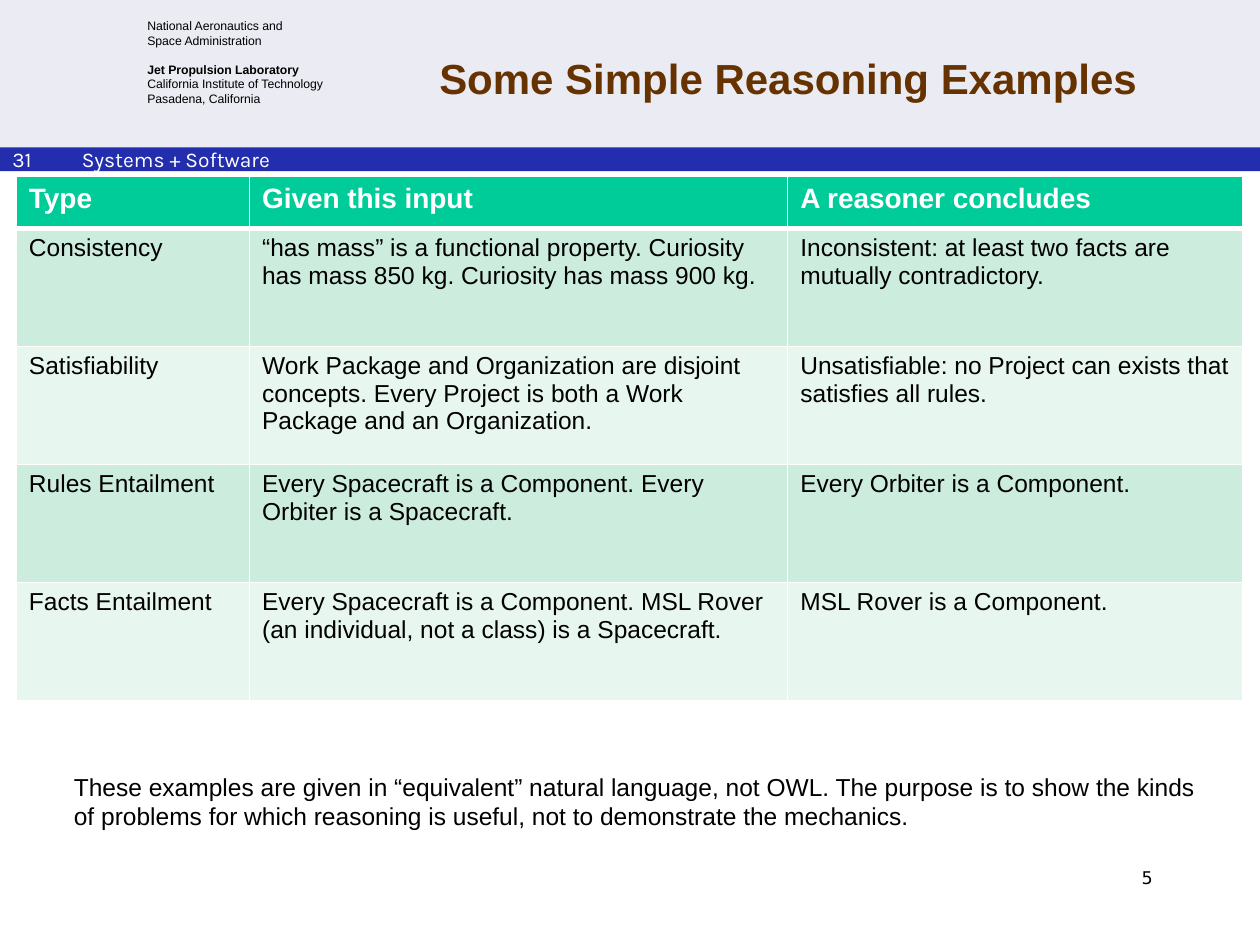
from dataclasses import dataclass

from lxml.etree import SubElement
from pptx import Presentation
from pptx.dml.color import RGBColor
from pptx.enum.shapes import MSO_SHAPE
from pptx.enum.text import MSO_ANCHOR, PP_ALIGN
from pptx.oxml.ns import qn
from pptx.util import Cm, Pt


@dataclass(frozen=True)
class Theme:
    font: str = "Arial"
    bar_font: str = "Karla"
    number_font: str = "DejaVu Sans"
    black: str = "000000"
    white: str = "FFFFFF"
    title: str = "663300"
    header: str = "EBEBF3"
    bar: str = "232EAE"
    table_head: str = "00CC99"
    bands: tuple = ("CCECDE", "E7F6EF")
    title_size: int = 24
    head_size: int = 16
    body_size: int = 14
    bar_size: int = 12
    number_size: int = 10
    address_size: int = 7


THEME = Theme()

ADDRESS = [
    ["National Aeronautics and", "Space Administration"],
    ["Jet Propulsion Laboratory"],
    ["California Institute of Technology"],
    ["Pasadena, California"],
]
COLUMN_WIDTHS = (4.7, 10.85, 9.17)
ROWS = [
    ("Type", "Given this input", "A reasoner concludes"),
    ("Consistency",
     "“has mass” is a functional property. Curiosity has mass 850 kg. Curiosity has mass 900 kg.",
     "Inconsistent: at least two facts are mutually contradictory."),
    ("Satisfiability",
     "Work Package and Organization are disjoint concepts. Every Project is both a Work Package and an Organization.",
     "Unsatisfiable: no Project can exists that satisfies all rules."),
    ("Rules Entailment",
     "Every Spacecraft is a Component. Every Orbiter is a Spacecraft.",
     "Every Orbiter is a Component."),
    ("Facts Entailment",
     "Every Spacecraft is a Component. MSL Rover (an individual, not a class) is a Spacecraft.",
     "MSL Rover is a Component."),
]
FOOTNOTE = ("These examples are given in “equivalent” natural language, not OWL. "
            "The purpose is to show the kinds of problems for which reasoning is useful, "
            "not to demonstrate the mechanics.")


def add_run(paragraph, text, size, color=THEME.black, font=THEME.font, bold=False):
    run = paragraph.add_run()
    run.text = text
    run.font.size = Pt(size)
    run.font.name = font
    run.font.bold = bold
    run.font.color.rgb = RGBColor.from_string(color)


def add_text_frame(slide, left, top, width, height, wrap=True):
    box = slide.shapes.add_textbox(Cm(left), Cm(top), Cm(width), Cm(height))
    box.text_frame.word_wrap = wrap
    return box.text_frame


def add_band(slide, left, top, width, height, color):
    band = slide.shapes.add_shape(
        MSO_SHAPE.RECTANGLE, Cm(left), Cm(top), Cm(width), Cm(height))
    band.shadow.inherit = False
    band.fill.solid()
    band.fill.fore_color.rgb = RGBColor.from_string(color)
    band.line.fill.background()


def add_header(slide, left, top, width, height):
    """Pale band with the address and the slide title."""
    add_band(slide, left, top, width, height, THEME.header)

    frame = add_text_frame(slide, left + 2.72, top + 0.25, 4.11, 2.03, wrap=False)
    for index, lines in enumerate(ADDRESS):
        paragraph = frame.add_paragraph() if index else frame.paragraphs[0]
        is_laboratory = index == 1
        if is_laboratory:
            paragraph.space_before = Pt(8)
        for line_index, line in enumerate(lines):
            if line_index:
                paragraph.add_line_break()
            add_run(paragraph, line, THEME.address_size, bold=is_laboratory)

    frame = add_text_frame(slide, left + 6.71, top + 0.43, 18.36, 2.26)
    frame.vertical_anchor = MSO_ANCHOR.MIDDLE
    paragraph = frame.paragraphs[0]
    paragraph.alignment = PP_ALIGN.CENTER
    add_run(paragraph, "Some Simple Reasoning Examples", THEME.title_size,
            THEME.title, bold=True)


def add_section_bar(slide, left, top, width, height):
    add_band(slide, left, top, width, height, THEME.bar)
    labels = (("31", 0, 1.04, False), ("Systems + Software", 1.4, 7.39, True))
    for text, offset, label_width, wrap in labels:
        frame = add_text_frame(slide, left + offset, top - 0.15, label_width, 0.76, wrap)
        add_run(frame.paragraphs[0], text, THEME.bar_size, THEME.white, THEME.bar_font)


def set_cell_borders(cell, **widths):
    """Draw white borders; the fill must be set afterwards to keep the XML order."""
    properties = cell._tc.get_or_add_tcPr()
    for side in ("L", "R", "T", "B"):
        line = SubElement(properties, qn(f"a:ln{side}"), w=str(Pt(widths.get(side, 1))))
        fill = SubElement(line, qn("a:solidFill"))
        SubElement(fill, qn("a:srgbClr"), val=THEME.white)


def add_reasoning_table(slide, left, top, width, height, head_height):
    table = slide.shapes.add_table(
        len(ROWS), len(COLUMN_WIDTHS), Cm(left), Cm(top), Cm(width), Cm(height)).table
    for column, column_width in zip(table.columns, COLUMN_WIDTHS):
        column.width = Cm(column_width)
    body_height = (height - head_height) / (len(ROWS) - 1)

    for row_index, texts in enumerate(ROWS):
        is_head = row_index == 0
        table.rows[row_index].height = Cm(head_height if is_head else body_height)
        color = THEME.table_head if is_head else THEME.bands[(row_index - 1) % 2]
        for column_index, text in enumerate(texts):
            cell = table.cell(row_index, column_index)
            set_cell_borders(cell, T=3 if row_index == 1 else 1, B=3 if is_head else 1)
            cell.fill.solid()
            cell.fill.fore_color.rgb = RGBColor.from_string(color)
            add_run(cell.text_frame.paragraphs[0], text,
                    THEME.head_size if is_head else THEME.body_size,
                    THEME.white if is_head else THEME.black, bold=is_head)


def add_footnote(slide, left, top, width, height):
    frame = add_text_frame(slide, left, top, width, height)
    add_run(frame.paragraphs[0], FOOTNOTE, THEME.body_size)


def add_page_number(slide, left, top, width, height):
    paragraph = add_text_frame(slide, left, top, width, height).paragraphs[0]
    paragraph.alignment = PP_ALIGN.RIGHT
    add_run(paragraph, "5", THEME.number_size, font=THEME.number_font)


def main():
    presentation = Presentation()
    presentation.slide_width = Cm(25.4)
    presentation.slide_height = Cm(19.05)
    slide = presentation.slides.add_slide(presentation.slide_layouts[6])

    add_header(slide, 0, 0, 25.4, 3.45)
    add_section_bar(slide, 0, 2.97, 25.4, 0.48)
    add_reasoning_table(slide, 0.33, 3.56, sum(COLUMN_WIDTHS), 10.56, head_height=1.04)
    add_footnote(slide, 1.24, 15.44, 23.19, 1.45)
    add_page_number(slide, 18.21, 17.35, 5.28, 1.27)

    presentation.save("out.pptx")


if __name__ == "__main__":
    main()
